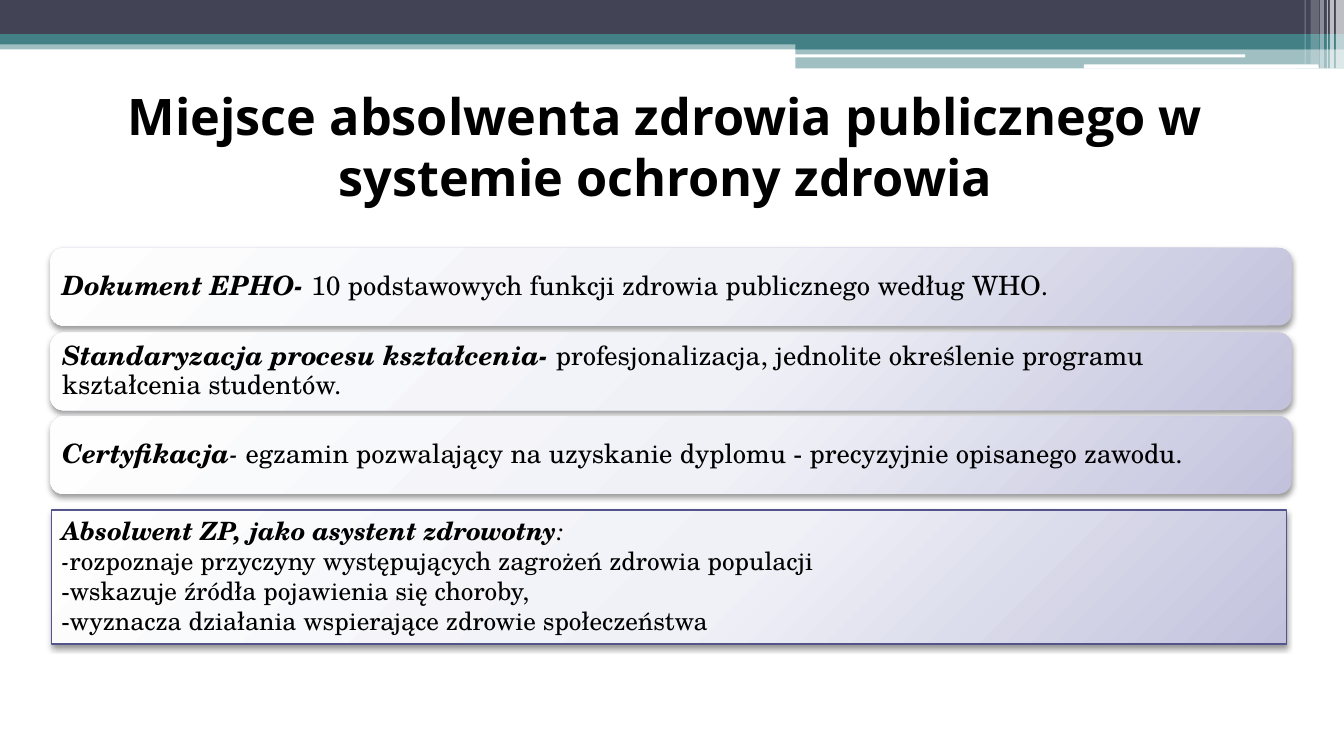
from dataclasses import dataclass

from pptx import Presentation
from pptx.dml.color import RGBColor
from pptx.enum.shapes import MSO_SHAPE
from pptx.enum.text import MSO_ANCHOR, PP_ALIGN
from pptx.oxml import parse_xml
from pptx.oxml.ns import nsdecls, qn
from pptx.util import Pt

PX = 9144  # 100 px to the inch
RECT, ROUND = MSO_SHAPE.RECTANGLE, MSO_SHAPE.ROUNDED_RECTANGLE
TOP, MIDDLE = MSO_ANCHOR.TOP, MSO_ANCHOR.MIDDLE
LEFT, CENTER = PP_ALIGN.LEFT, PP_ALIGN.CENTER


@dataclass(frozen=True)
class Theme:
    navy: str = "424456"
    teal: str = "438086"
    white: str = "FFFFFF"
    ink: str = "000000"
    outline: str = "53548A"
    gradient: tuple = ((0, "FEFEFE"), (55, "F0F1F7"), (100, "C2C2DD"))
    heading_font: str = "Open Sans"
    body_font: str = "TeX Gyre Schola"
    title_size: int = 36
    card_size: int = 19
    summary_size: int = 18


def span(text, bold=False, italic=False):
    return text, bold, italic


def write(frame, paras, font, size, color, align=LEFT, anchor=TOP, spacing=None, inset=None):
    """Fill a text frame; each para is a list of spans."""
    frame.word_wrap = True
    frame.vertical_anchor = anchor
    if inset is not None:
        frame.margin_left = frame.margin_right = inset * PX
        frame.margin_top = frame.margin_bottom = inset * PX
    for index, spans in enumerate(paras):
        para = frame.paragraphs[0] if index == 0 else frame.add_paragraph()
        para.alignment = align
        if spacing:
            para.line_spacing = spacing
        for text, bold, italic in spans:
            run = para.add_run()
            run.text = text
            run.font.name, run.font.size = font, Pt(size)
            run.font.bold, run.font.italic = bold, italic
            run.font.color.rgb = RGBColor.from_string(color)


class Page:
    def __init__(self, deck, theme):
        self.theme = theme
        self.shapes = deck.slides.add_slide(deck.slide_layouts[6]).shapes

    def shape(self, kind, box):
        shape = self.shapes.add_shape(kind, *(length * PX for length in box))
        shape.shadow.inherit = False
        shape.line.fill.background()
        return shape

    def band(self, box, color, opacity=100, kind=RECT):
        fill = self.shape(kind, box).fill
        fill.solid()
        fill.fore_color.rgb = RGBColor.from_string(color)
        if opacity < 100:
            color_node = fill._xPr.find(qn("a:solidFill"))[0]
            color_node.append(parse_xml(f'<a:alpha {nsdecls("a")} val="{opacity * 1000}"/>'))

    def title(self, box, text):
        frame = self.shapes.add_textbox(*(length * PX for length in box)).text_frame
        theme = self.theme
        write(frame, [[span(text, bold=True)]], theme.heading_font, theme.title_size,
              theme.ink, align=CENTER, anchor=MIDDLE)

    def panel(self, kind, box, paras, size, outline=None, **text_format):
        """Add a shape with the pale gradient, a soft shadow and text."""
        shape = self.shape(kind, box)
        shape.fill.gradient()
        properties = shape._element.spPr
        stops = "".join(f'<a:gs pos="{position * 1000}"><a:srgbClr val="{color}"/></a:gs>'
                        for position, color in self.theme.gradient)
        properties.replace(properties.find(qn("a:gradFill")), parse_xml(
            f'<a:gradFill {nsdecls("a")} rotWithShape="1"><a:gsLst>{stops}</a:gsLst>'
            '<a:path path="circle"><a:fillToRect l="-40000" t="-90000" r="140000" b="190000"/>'
            '</a:path></a:gradFill>'))
        properties.find(qn("a:effectLst")).append(parse_xml(
            f'<a:outerShdw {nsdecls("a")} blurRad="{Pt(4.1)}" dist="{Pt(2)}" dir="5400000" '
            f'rotWithShape="0"><a:srgbClr val="{self.theme.ink}"><a:alpha val="40000"/>'
            '</a:srgbClr></a:outerShdw>'))
        if outline:
            shape.line.color.rgb = RGBColor.from_string(outline)
            shape.line.width = Pt(0.75)
        write(shape.text_frame, paras, self.theme.body_font, size, self.theme.ink, **text_format)


def draw_header(page):
    theme = page.theme
    page.band((0, 40, 1333, 9), theme.teal, 50)
    page.band((0, 0, 1333, 34), theme.navy)
    page.band((0, 34, 1333, 10), theme.teal)
    page.band((789, 39, 544, 10), theme.teal)
    page.band((789, 48, 544, 20), theme.teal, 50)
    page.band((788, 54, 447, 3), theme.white, kind=ROUND)
    page.band((1075, 64, 233, 4), theme.white, kind=ROUND)
    stripes = ((1325, 8, 68, 65), (1319, 4, 68, 65), (1316, 1, 68, 60),
               (1309, 4, 68, 40), (1300, 8, 64, 20), (1294, 1, 64, 30))
    for left, width, height, opacity in stripes:
        page.band((left, 0, width, height), theme.white, opacity)


def main():
    deck = Presentation()
    deck.slide_width, deck.slide_height = 1333 * PX, 750 * PX
    theme = Theme()
    page = Page(deck, theme)
    draw_header(page)
    page.title((60, 86, 1200, 117),
               "Miejsce absolwenta zdrowia publicznego w systemie ochrony zdrowia")

    cards = (
        [span("Dokument EPHO- ", bold=True, italic=True),
         span("10 podstawowych funkcji zdrowia publicznego według WHO.")],
        [span("Standaryzacja procesu kształcenia- ", bold=True, italic=True),
         span("profesjonalizacja, jednolite określenie programu kształcenia studentów.")],
        [span("Certyfikacja", bold=True, italic=True), span("- ", italic=True),
         span("egzamin pozwalający na uzyskanie dyplomu - precyzyjnie opisanego zawodu.")],
    )
    card_top, card_pitch = 246, 83.5
    for index, spans in enumerate(cards):
        top = round(card_top + index * card_pitch)
        page.panel(ROUND, (50, top, 1231, 77), [spans], theme.card_size,
                   anchor=MIDDLE, spacing=0.9, inset=8)

    summary = [
        [span("Absolwent ZP, jako asystent zdrowotny", bold=True, italic=True),
         span(":", italic=True)],
        [span("-", italic=True),
         span("rozpoznaje przyczyny występujących zagrożeń zdrowia populacji")],
        [span("-wskazuje źródła pojawienia się choroby,")],
        [span("-wyznacza działania wspierające zdrowie społeczeństwa")],
    ]
    page.panel(RECT, (51, 506, 1225, 133), summary, theme.summary_size, outline=theme.outline)
    deck.save("out.pptx")


if __name__ == "__main__":
    main()
